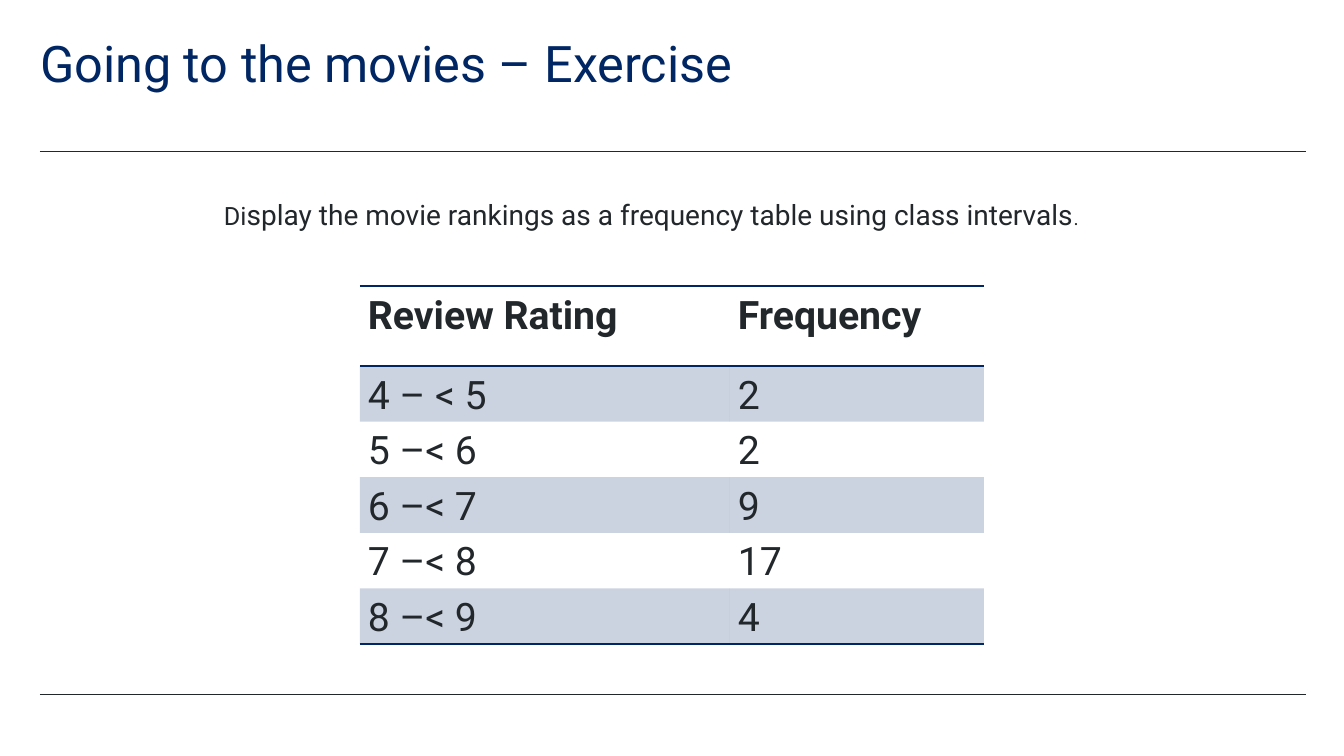
from dataclasses import dataclass

from lxml import etree
from pptx import Presentation, util as u
from pptx.dml.color import RGBColor
from pptx.enum import shapes, text
from pptx.oxml import ns

EMU_PER_PX = 914400 / 100.8


@dataclass(frozen=True)
class Theme:
    font: str = "Roboto"
    navy: str = "002664"
    ink: str = "22272B"
    title_size: int = 36
    lead_size: int = 18
    task_size: int = 20
    stop_size: int = 14
    table_size: int = 28
    rule_width: float = 0.5
    border_width: int = 1
    band_alpha: int = 20000
    plain_table: str = "{2D5ABB26-0587-4C30-8999-92F81FD0307C}"


@dataclass(frozen=True)
class Phrase:
    words: str
    size: int


@dataclass(frozen=True)
class Line:
    left: int
    top: int
    width: int
    height: int
    phrases: tuple[Phrase, ...]
    color: str
    spacing: float = 1.0


@dataclass(frozen=True)
class Interval:
    rating: str
    frequency: str


THEME = Theme()
RULE_LEFT, RULE_RIGHT = 40, 1306
RULE_TOPS = (151, 694)
LINES = (
    Line(40, 39, 1111, 60, (Phrase("Going to the movies – Exercise", THEME.title_size),),
         THEME.navy, 0.9),
    Line(224, 198, 896, 43, (
        Phrase("Di", THEME.lead_size),
        Phrase("splay the movie rankings as a frequency table using class intervals",
               THEME.task_size),
        Phrase(".", THEME.stop_size),
    ), THEME.ink),
)
INTERVALS = (
    Interval("Review Rating", "Frequency"),
    Interval("4 – < 5", "2"),
    Interval("5 –< 6", "2"),
    Interval("6 –< 7", "9"),
    Interval("7 –< 8", "17"),
    Interval("8 –< 9", "4"),
)
TABLE_LEFT, TABLE_TOP = 360, 286
COLUMN_WIDTHS = (370, 254)
HEADER_HEIGHT, BODY_HEIGHT = 80, 278
CELL_INSET = 8


def px(length: int) -> u.Emu:
    return u.Emu(round(length * EMU_PER_PX))


def style_font(font, color: str) -> None:
    font.name = THEME.font
    font.color.rgb = RGBColor.from_string(color)


def draw_rule(slide, top: int) -> None:
    rule = slide.shapes.add_connector(
        shapes.MSO_CONNECTOR.STRAIGHT, px(RULE_LEFT), px(top), px(RULE_RIGHT), px(top))
    rule.line.width = u.Pt(THEME.rule_width)
    rule.line.color.rgb = RGBColor.from_string(THEME.ink)
    etree.SubElement(rule.element.spPr, ns.qn("a:effectLst"))


def draw_line(slide, line: Line) -> None:
    box = slide.shapes.add_textbox(
        px(line.left), px(line.top), px(line.width), px(line.height))
    frame = box.text_frame
    frame.word_wrap = True
    frame.margin_left = frame.margin_right = frame.margin_top = frame.margin_bottom = 0
    paragraph = frame.paragraphs[0]
    paragraph.line_spacing = line.spacing
    style_font(paragraph.font, line.color)
    if len(line.phrases) == 1:
        paragraph.font.size = u.Pt(line.phrases[0].size)
    for phrase in line.phrases:
        run = paragraph.add_run()
        run.text = phrase.words
        if len(line.phrases) > 1:
            run.font.size = u.Pt(phrase.size)


def add_color(parent, color: str):
    solid = etree.SubElement(parent, ns.qn("a:solidFill"))
    return etree.SubElement(solid, ns.qn("a:srgbClr"), val=color)


def add_border(cell, side: str) -> None:
    properties = cell._tc.get_or_add_tcPr()
    border = etree.SubElement(
        properties, ns.qn(f"a:{side}"), w=str(int(u.Pt(THEME.border_width))))
    add_color(border, THEME.navy)


def fill_band(cell) -> None:
    band = add_color(cell._tc.get_or_add_tcPr(), THEME.navy)
    etree.SubElement(band, ns.qn("a:alpha"), val=str(THEME.band_alpha))


def fill_cell(cell, words: str, row: int) -> None:
    last_row = len(INTERVALS) - 1
    cell.margin_left = cell.margin_right = px(CELL_INSET)
    cell.margin_top = cell.margin_bottom = 0
    cell.vertical_anchor = text.MSO_ANCHOR.TOP
    if row == 0:
        add_border(cell, "lnT")
    if row in (0, last_row):
        add_border(cell, "lnB")
    if row % 2:
        fill_band(cell)
    else:
        cell.fill.background()
    cell.text = words
    paragraph = cell.text_frame.paragraphs[0]
    paragraph.line_spacing = 1.15
    style_font(paragraph.font, THEME.ink)
    paragraph.font.size = u.Pt(THEME.table_size)
    paragraph.font.bold = row == 0


def draw_frequencies(slide) -> None:
    frame = slide.shapes.add_table(
        len(INTERVALS), len(COLUMN_WIDTHS), px(TABLE_LEFT), px(TABLE_TOP),
        px(sum(COLUMN_WIDTHS)), px(HEADER_HEIGHT + BODY_HEIGHT))
    for style in frame.element.iter(ns.qn("a:tableStyleId")):
        style.text = THEME.plain_table
    table = frame.table
    table.horz_banding = False
    for column, width in zip(table.columns, COLUMN_WIDTHS):
        column.width = px(width)
    for row, interval in enumerate(INTERVALS):
        table.rows[row].height = (
            px(BODY_HEIGHT) // (len(INTERVALS) - 1) if row else px(HEADER_HEIGHT))
        for column, words in enumerate((interval.rating, interval.frequency)):
            fill_cell(table.cell(row, column), words, row)


def main() -> None:
    deck = Presentation()
    deck.slide_width, deck.slide_height = px(1344), px(756)
    slide = deck.slides.add_slide(deck.slide_layouts[6])
    for top in RULE_TOPS:
        draw_rule(slide, top)
    for line in LINES:
        draw_line(slide, line)
    draw_frequencies(slide)
    deck.save("out.pptx")


if __name__ == "__main__":
    main()
